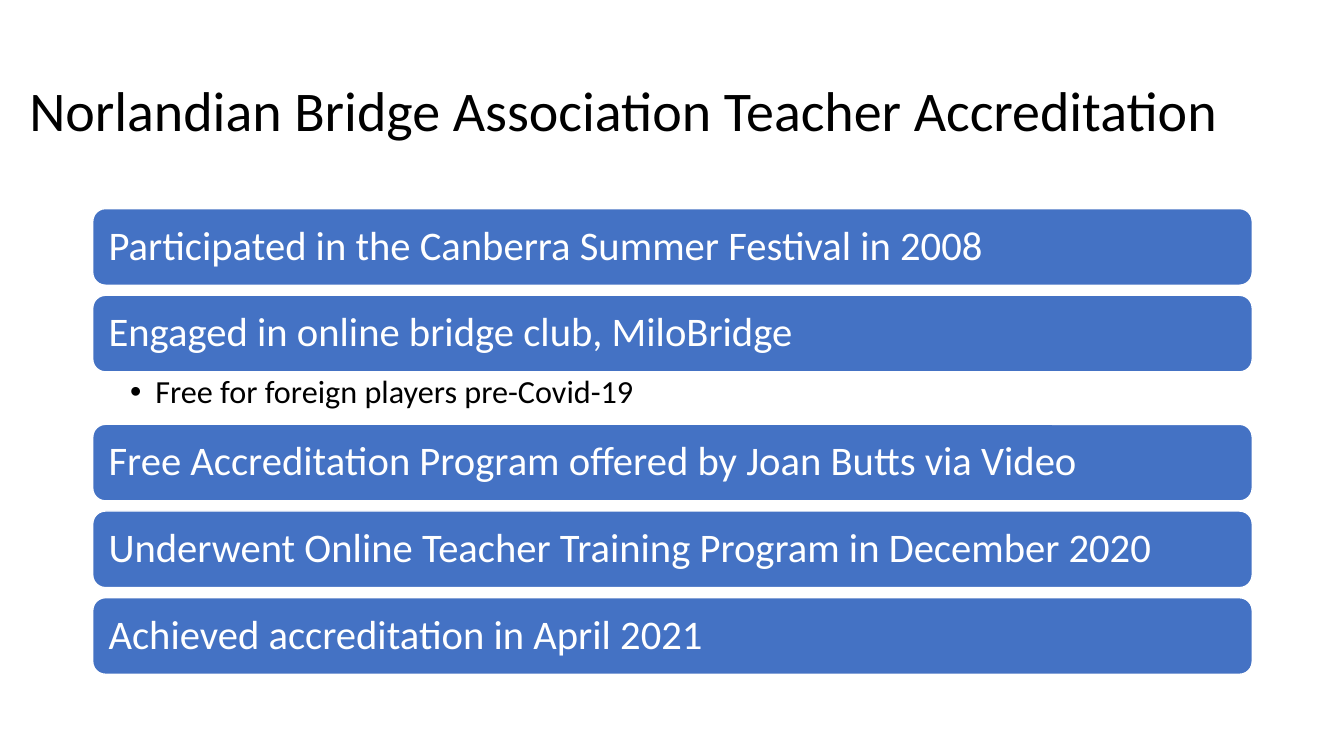
from pptx import Presentation
from pptx.dml.color import RGBColor
from pptx.enum import shapes, text
from pptx.oxml import parse_xml
from pptx.oxml.ns import nsdecls
from pptx.util import Inches, Pt

HEADING = "Norlandian Bridge Association Teacher Accreditation"
MILESTONES = [
    ("Participated in the Canberra Summer Festival in 2008", None),
    ("Engaged in online bridge club, MiloBridge", "Free for foreign players pre-Covid-19"),
    ("Free Accreditation Program offered by Joan Butts via Video", None),
    ("Underwent Online Teacher Training Program in December 2020", None),
    ("Achieved accreditation in April 2021", None),
]
BLUE, WHITE, BLACK = "4472C4", "FFFFFF", "000000"
LEFT, TOP, WIDTH = 0.92, 2.07, 11.5
BAR_HEIGHT, GAP, DETAIL_HEIGHT = 0.76, 0.1, 0.52


def color(value):
    return RGBColor.from_string(value)


def place(part, left, top, width, height):
    part.left, part.top = Inches(left), Inches(top)
    part.width, part.height = Inches(width), Inches(height)


def write(part, words, size, hue, anchor, insets):
    frame = part.text_frame
    frame.text = words
    frame.word_wrap = True
    frame.auto_size = text.MSO_AUTO_SIZE.NONE
    frame.vertical_anchor = anchor
    frame.margin_left, frame.margin_top, frame.margin_right, frame.margin_bottom = map(Inches, insets)
    paragraph = frame.paragraphs[0]
    paragraph.alignment = text.PP_ALIGN.LEFT
    paragraph.line_spacing = 0.9
    paragraph.space_before = Pt(0)
    paragraph.font.name = "Calibri"
    paragraph.font.size = Pt(size)
    paragraph.font.color.rgb = color(hue)
    return paragraph


def add_bullet(paragraph):
    properties = paragraph._p.get_or_add_pPr()
    properties.set("marL", str(Inches(0.25)))
    properties.set("indent", str(Inches(-0.25)))
    properties.append(parse_xml(f'<a:buChar {nsdecls("a")} char="•"/>'))


deck = Presentation()
deck.slide_width, deck.slide_height = Inches(13.33), Inches(7.5)
slide = deck.slides.add_slide(deck.slide_layouts[1])
heading, detail_list = slide.placeholders

place(heading, 0.19, 0.4, 12.23, 1.45)
write(heading, HEADING, 40, BLACK, text.MSO_ANCHOR.MIDDLE, (0.1, 0.05, 0.1, 0.05))

top = TOP
for milestone, detail in MILESTONES:
    bar = slide.shapes.add_shape(
        shapes.MSO_SHAPE.ROUNDED_RECTANGLE,
        Inches(LEFT), Inches(top), Inches(WIDTH), Inches(BAR_HEIGHT))
    bar.shadow.inherit = False
    bar.fill.solid()
    bar.fill.fore_color.rgb = color(BLUE)
    bar.line.color.rgb = color(WHITE)
    bar.line.width = Pt(1)
    write(bar, milestone, 29, WHITE, text.MSO_ANCHOR.MIDDLE, (0.12, 0.12, 0.12, 0.12))
    top += BAR_HEIGHT
    if detail:
        place(detail_list, LEFT, top, WIDTH, DETAIL_HEIGHT)
        add_bullet(write(detail_list, detail, 23, BLACK, text.MSO_ANCHOR.TOP, (0.37, 0.04, 0.23, 0.04)))
        top += DETAIL_HEIGHT
    else:
        top += GAP

deck.save("out.pptx")
